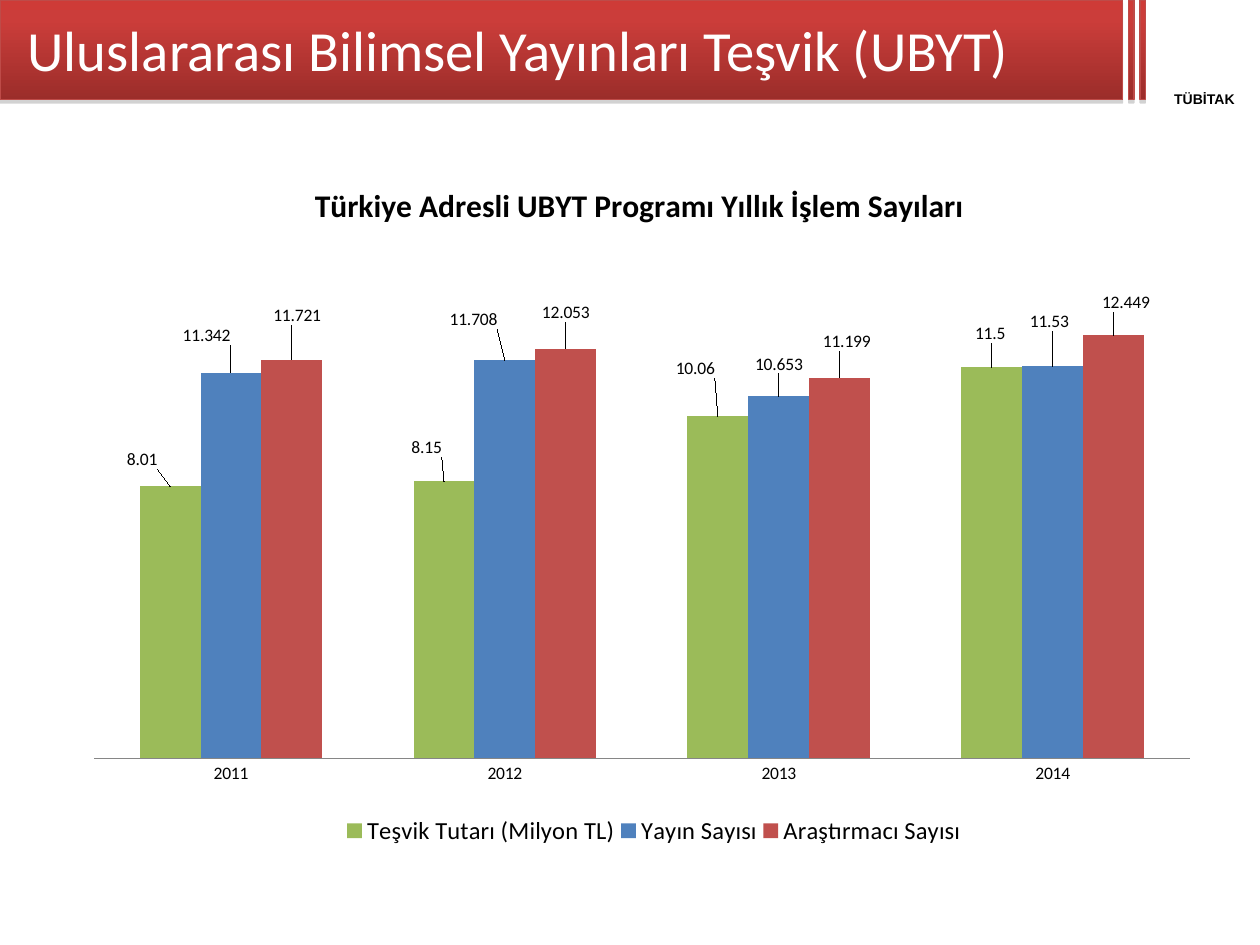
from copy import deepcopy
from typing import NamedTuple

from lxml import etree
from pptx import Presentation
from pptx.chart.data import CategoryChartData
from pptx.dml.color import RGBColor
from pptx.enum import chart as ch, shapes, text
from pptx.oxml.ns import qn
from pptx.util import Pt


class Stripe(NamedTuple):
    left: float
    width: float


class Measure(NamedTuple):
    name: str
    color: str
    values: tuple
    label_shifts: tuple


STRIPES = (Stripe(0, 641.5), Stripe(645, 3), Stripe(651.5, 3))
STRIPE_HEIGHT = 57
GRADIENT = ((0, "CE3B37"), (0.2, "CB3D3A"), (1, "9B2D2A"))
YEARS = ("2011", "2012", "2013", "2014")
MEASURES = (
    Measure("Teşvik Tutarı (Milyon TL)", "9BBB59", (8.01, 8.15, 10.06, 11.5),
            ((-16, -7), (-10, -11), (-13, -19), (-1, -11))),
    Measure("Yayın Sayısı", "4F81BD", (11.342, 11.708, 10.653, 11.53),
            ((-14, -13), (-18, -15), (0, -10), (-2, -17))),
    Measure("Araştırmacı Sayısı", "C0504D", (11.721, 12.053, 11.199, 12.449),
            ((3, -17), (0, -12), (4, -12), (7, -10))),
)
CHART_LEFT, CHART_TOP, CHART_WIDTH, CHART_HEIGHT = 36.7, 82.8, 652.3, 425.5


def rgb(value: str) -> RGBColor:
    return RGBColor.from_string(value)


def style_font(font, name: str, size: float, color: str, bold: bool = False) -> None:
    font.name, font.size, font.bold = name, Pt(size), bold
    font.color.rgb = rgb(color)


def add_stripe(slide, stripe: Stripe) -> None:
    bar = slide.shapes.add_shape(shapes.MSO_SHAPE.RECTANGLE, Pt(stripe.left), 0,
                                 Pt(stripe.width), Pt(STRIPE_HEIGHT))
    bar.fill.gradient()
    bar.fill.gradient_angle = 270
    stop_list = bar._element.spPr.find(".//" + qn("a:gsLst"))
    stop_list.append(deepcopy(stop_list[-1]))
    for stop, (position, color) in zip(bar.fill.gradient_stops, GRADIENT):
        stop.position = position
        stop.color.rgb = rgb(color)
    bar.line.color.rgb = rgb("BE4B48")
    bar.line.width = Pt(0.75)
    bar.shadow.inherit = False
    effects = bar._element.spPr.find(qn("a:effectLst"))
    shadow = etree.SubElement(effects, qn("a:outerShdw"), blurRad="0",
                              dist=str(Pt(1.8)), dir="5400000", rotWithShape="0")
    tone = etree.SubElement(shadow, qn("a:srgbClr"), val="808080")
    etree.SubElement(tone, qn("a:alpha"), val="35000")


def place(part, index: int, inner: bool = False, edge: bool = True, **lengths: float) -> None:
    for old in part.findall(qn("c:layout")):
        part.remove(old)
    layout = etree.Element(qn("c:layout"))
    manual = etree.SubElement(layout, qn("c:manualLayout"))
    if inner:
        etree.SubElement(manual, qn("c:layoutTarget"), val="inner")
    if edge:
        for mode in ("xMode", "yMode"):
            etree.SubElement(manual, qn("c:" + mode), val="edge")
    for key, length in lengths.items():
        whole = CHART_WIDTH if key in "xw" else CHART_HEIGHT
        etree.SubElement(manual, qn("c:" + key), val=f"{length / whole:.5f}")
    part.insert(index, layout)


def style_measure(series, measure: Measure) -> None:
    series.format.fill.solid()
    series.format.fill.fore_color.rgb = rgb(measure.color)
    series.invert_if_negative = False
    series.data_labels.show_value = True
    series.data_labels.position = ch.XL_LABEL_POSITION.OUTSIDE_END
    for index in range(len(measure.values)):
        series.points[index].data_label.position = ch.XL_LABEL_POSITION.OUTSIDE_END
    labels = series._element.iter(qn("c:dLbl"))
    for label, (x, y) in zip(labels, measure.label_shifts):
        place(label, 1, edge=False, x=x, y=y)


def add_yearly_chart(slide) -> None:
    data = CategoryChartData()
    data.categories = YEARS
    for measure in MEASURES:
        data.add_series(measure.name, measure.values)
    chart = slide.shapes.add_chart(
        ch.XL_CHART_TYPE.COLUMN_CLUSTERED, Pt(CHART_LEFT), Pt(CHART_TOP),
        Pt(CHART_WIDTH), Pt(CHART_HEIGHT), data).chart
    style_font(chart.font, "Calibri", 10, "000000")

    heading = chart.chart_title.text_frame
    heading.text = "Türkiye Adresli UBYT Programı Yıllık İşlem Sayıları"
    style_font(heading.paragraphs[0].font, "Calibri", 18, "000000", True)
    place(chart.chart_title._element, 1, x=140, y=19)

    chart.has_legend = True
    chart.legend.position = ch.XL_LEGEND_POSITION.TOP
    chart.legend.include_in_layout = False
    style_font(chart.legend.font, "Calibri", 14, "000000")
    place(chart.legend._element, 1, x=158, y=380, w=358, h=24)

    years = chart.category_axis
    years.major_tick_mark = ch.XL_TICK_MARK.NONE
    years.format.line.color.rgb = rgb("868686")
    amounts = chart.value_axis
    amounts.minimum_scale, amounts.maximum_scale = 0, 14
    amounts.has_major_gridlines = False
    amounts.visible = False

    plot = chart.plots[0]
    plot.gap_width, plot.overlap = 150, 0
    plot.vary_by_categories = False
    for series, measure in zip(plot.series, MEASURES):
        style_measure(series, measure)
    place(plot._element.getparent(), 0, inner=True, x=17, y=78.7, w=626.2, h=271.9)


def add_institution(slide) -> None:
    label = slide.shapes.add_textbox(Pt(651.6), Pt(51.8), Pt(73.4), Pt(9.4))
    frame = label.text_frame
    frame.margin_left = frame.margin_right = frame.margin_top = frame.margin_bottom = 0
    frame.word_wrap = True
    frame.text = "TÜBİTAK"
    frame.paragraphs[0].alignment = text.PP_ALIGN.CENTER
    style_font(frame.paragraphs[0].font, "Arial", 8, "000000", True)


def set_title(slide) -> None:
    title = slide.shapes.title
    title.left, title.top, title.width, title.height = Pt(8.6), 0, Pt(635), Pt(55.4)
    title.text = "Uluslararası Bilimsel Yayınları Teşvik (UBYT)"
    title.text_frame.vertical_anchor = text.MSO_ANCHOR.MIDDLE
    title.text_frame.auto_size = text.MSO_AUTO_SIZE.NONE
    paragraph = title.text_frame.paragraphs[0]
    paragraph.alignment = text.PP_ALIGN.LEFT
    style_font(paragraph.font, "Calibri", 32.4, "FFFFFF")
    title._element.getparent().append(title._element)


def main() -> None:
    deck = Presentation()
    deck.slide_width, deck.slide_height = Pt(720), Pt(540)
    slide = deck.slides.add_slide(deck.slide_layouts[5])
    for stripe in STRIPES:
        add_stripe(slide, stripe)
    add_institution(slide)
    set_title(slide)
    add_yearly_chart(slide)
    deck.save("out.pptx")


if __name__ == "__main__":
    main()
